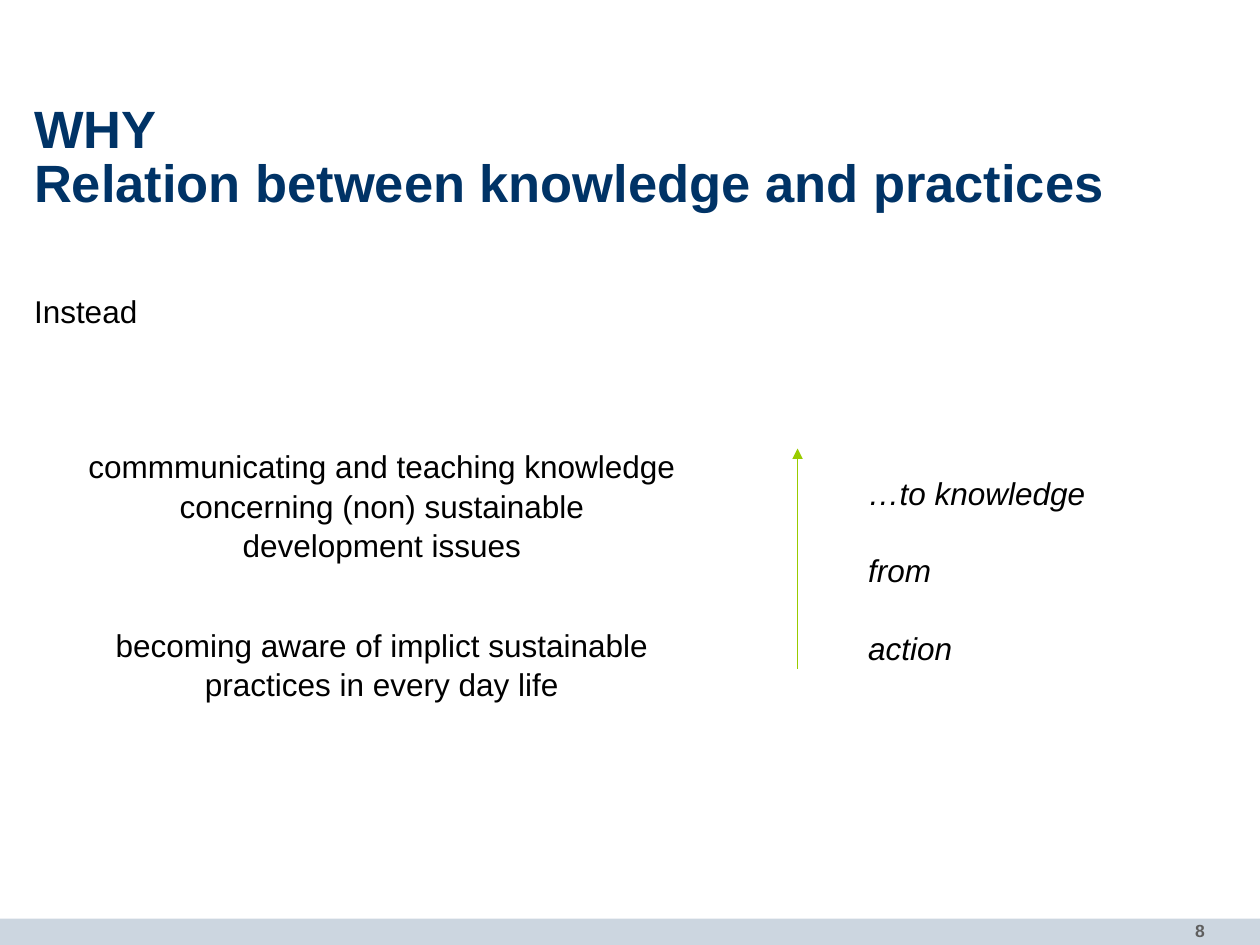
from lxml import etree
from pptx import Presentation, util as u
from pptx.dml.color import RGBColor
from pptx.enum import shapes, text
from pptx.oxml.ns import qn

# The page is a grid of 100 columns by 75 rows
CELL = u.Inches(0.1)
COLUMNS, ROWS = 100, 75
LINE = 3.02  # height of one body line, in rows

COLORS = {"navy": "003366", "black": "000000", "gray": "5F5F5F",
          "white": "FFFFFF", "band": "CCD6E0", "green": "99CC00"}

BODY = {"size": u.Pt(18), "name": "Arial", "color": "black"}
TITLE = {"size": u.Pt(30), "name": "Arial", "bold": True, "color": "navy"}
NUMBER = {"size": u.Pt(10), "name": "Arial", "bold": True, "color": "gray"}


def cells(*counts):
    return [round(count * CELL) for count in counts]


def color(name):
    return RGBColor.from_string(COLORS[name])


def add_panel(page, area, fill):
    """Plain filled rectangle without outline."""
    panel = page.shapes.add_shape(shapes.MSO_SHAPE.RECTANGLE, *cells(*area))
    panel.shadow.inherit = False
    panel.fill.solid()
    panel.fill.fore_color.rgb = color(fill)
    panel.line.fill.background()
    return panel


def add_label(page, area):
    return page.shapes.add_textbox(*cells(*area))


def write(box, lines, font, margins=(1, 0.5, 1, 0.5), anchor="TOP",
          align="LEFT", spacing=1.0, gap=0):
    """Fill a box with one paragraph per line; gap is in rows."""
    frame = box.text_frame
    frame.word_wrap = True
    frame.vertical_anchor = text.MSO_ANCHOR[anchor]
    sides = ("left", "top", "right", "bottom")
    for side, margin in zip(sides, cells(*margins)):
        setattr(frame, f"margin_{side}", margin)
    for index, line in enumerate(lines):
        para = frame.add_paragraph() if index else frame.paragraphs[0]
        para.text = line
        para.alignment = text.PP_ALIGN[align]
        para.line_spacing = spacing
        if index and gap:
            para.space_before = u.Pt(round(gap * CELL.pt, 1))
        for span in para.runs:
            for key, value in font.items():
                if key == "color":
                    span.font.color.rgb = color(value)
                else:
                    setattr(span.font, key, value)


def add_arrow(page, start, end, stroke):
    """Thin line with a triangle at its start."""
    arrow = page.shapes.add_connector(
        shapes.MSO_CONNECTOR.STRAIGHT, *cells(*start, *end))
    arrow.line.color.rgb = color(stroke)
    arrow.line.width = u.Pt(0.75)
    etree.SubElement(arrow.line._get_or_add_ln(), qn("a:headEnd"),
                     type="triangle")
    etree.SubElement(arrow._element.spPr, qn("a:effectLst"))


def main():
    deck = Presentation()
    deck.slide_width, deck.slide_height = cells(COLUMNS, ROWS)
    page = deck.slides.add_slide(deck.slide_layouts[6])

    # Footer band and page number
    add_panel(page, (0, 72.9, COLUMNS, 2.1), "band")
    write(add_label(page, (83.2, 72.5, 13.4, 2.6)), ["8"], NUMBER,
          align="RIGHT")

    # Title and lead-in
    write(add_label(page, (2.7, 10.3, 94.5, 4.7)),
          ["WHY\vRelation between knowledge and practices"], TITLE,
          margins=(0, 0, 0, 0), anchor="MIDDLE", spacing=0.85)
    write(add_label(page, (2.7, 17.7, 94.5, 53.2)), ["Instead"], BODY,
          margins=(0, 7.7, 0, 0), spacing=1.02)

    # Two statements, each one line below the top of its panel
    statements = {
        31.8: "commmunicating and teaching knowledge concerning (non) "
              "sustainable development issues",
        46: "becoming aware of implict sustainable practices in every day life",
    }
    for top, statement in statements.items():
        write(add_panel(page, (5.9, top, 48.8, 12.6), "white"), [statement],
              BODY, margins=(1, 0.5 + LINE, 1, 0.5), align="CENTER",
              spacing=1.05)

    # Direction from action to knowledge
    write(add_panel(page, (57.9, 30.9, 34.6, 26.8), "white"),
          ["…to knowledge", "from", "action"], {**BODY, "italic": True},
          margins=(11, 0.5 + 2 * LINE, 1, 0.5), spacing=1.05, gap=LINE)
    add_arrow(page, (63.3, 35.6), (63.3, 53.1), "green")

    deck.save("out.pptx")


if __name__ == "__main__":
    main()
